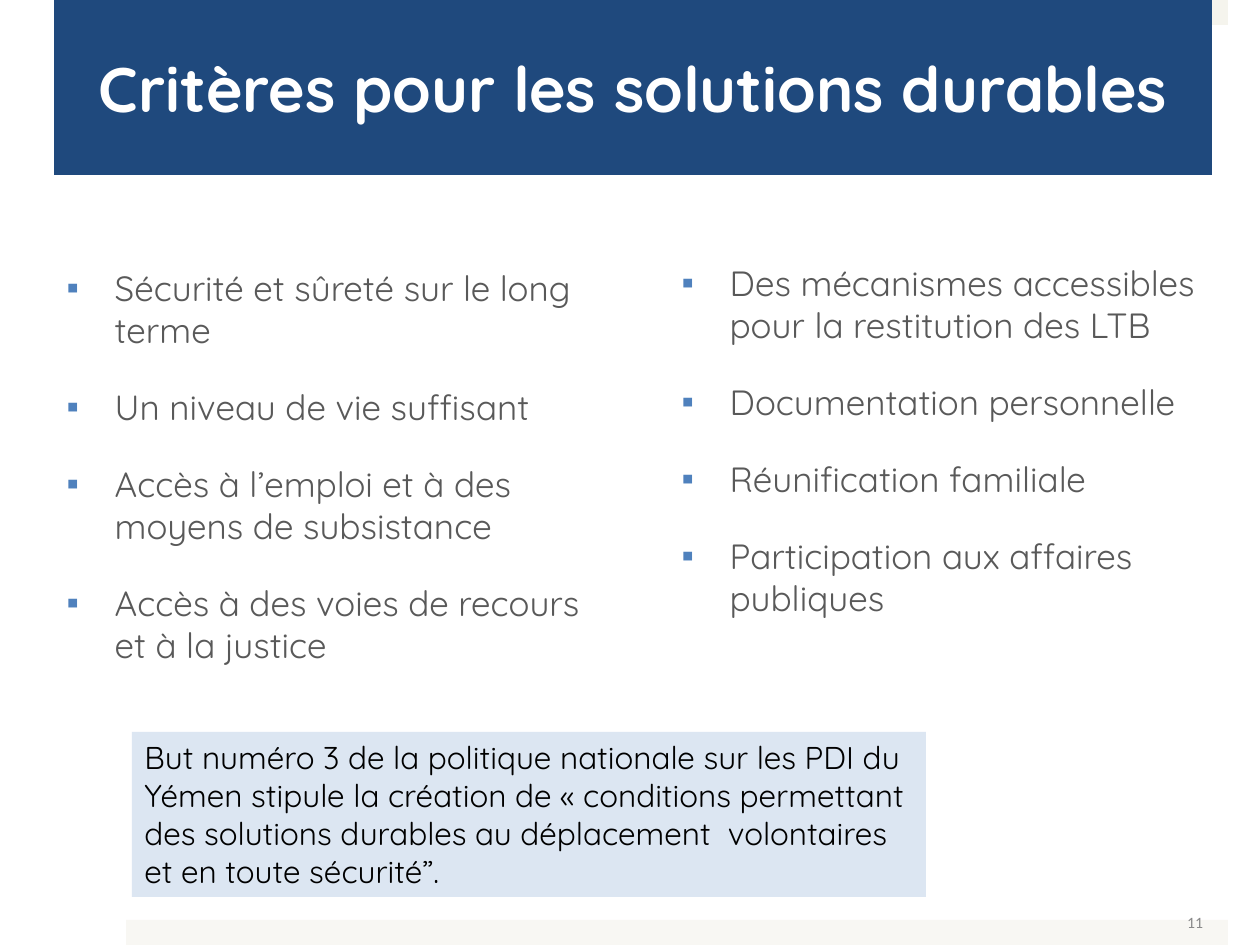
from dataclasses import dataclass

from lxml.etree import SubElement
from pptx import Presentation
from pptx.dml.color import RGBColor
from pptx.enum.shapes import MSO_SHAPE as Shape
from pptx.enum.text import MSO_ANCHOR as Anchor, MSO_AUTO_SIZE as AutoSize, PP_ALIGN as Align
from pptx.oxml.ns import qn
from pptx.util import Emu, Inches, Pt

PX_PER_INCH = 126
TWO_CONTENT_LAYOUT = 3


@dataclass(frozen=True)
class Theme:
    font: str = "Quicksand"
    number_font: str = "Calibri"
    navy: str = "1F497D"
    accent: str = "4F81BD"
    pale_blue: str = "DCE6F2"
    top_band: str = "F5F4ED"
    bottom_band: str = "F8F7F3"
    white: str = "FFFFFF"
    black: str = "000000"
    body_grey: str = "595959"
    number_grey: str = "898989"
    title_size: int = 36
    body_size: int = 20
    quote_size: int = 18
    number_size: int = 9
    bullet: str = "▪"


def px(length):
    return Emu(round(length * Inches(1) / PX_PER_INCH))


class SlideBuilder:
    """Holds the theme and the current slide, and adds each kind of element."""

    def __init__(self, slide, theme):
        self.slide = slide
        self.theme = theme

    def place(self, placeholder, box):
        self.slide.shapes._spTree.append(placeholder._element)
        placeholder.left, placeholder.top, placeholder.width, placeholder.height = map(px, box)
        placeholder.text_frame.auto_size = AutoSize.NONE
        placeholder.text_frame.word_wrap = True

    def format_runs(self, paragraph, size, color, bold=False, name=None):
        for run in paragraph.runs:
            run.font.name = name or self.theme.font
            run.font.size = Pt(size)
            run.font.bold = bold
            run.font.color.rgb = RGBColor.from_string(color)

    def fill(self, shape, color):
        shape.fill.solid()
        shape.fill.fore_color.rgb = RGBColor.from_string(color)

    def rectangle(self, box, color):
        shape = self.slide.shapes.add_shape(Shape.RECTANGLE, *map(px, box))
        shape.shadow.inherit = False
        self.fill(shape, color)
        shape.line.fill.background()
        return shape

    def title(self, text, box):
        title = self.slide.shapes.title
        self.place(title, box)
        self.fill(title, self.theme.navy)
        title.text_frame.text = text
        title.text_frame.vertical_anchor = Anchor.MIDDLE
        paragraph = title.text_frame.paragraphs[0]
        paragraph.alignment = Align.CENTER
        self.format_runs(paragraph, self.theme.title_size, self.theme.white, bold=True)

    def add_bullet(self, paragraph):
        properties = paragraph._p.get_or_add_pPr()
        properties.set("marL", str(px(48)))
        properties.set("indent", str(-px(48)))
        color = SubElement(properties, qn("a:buClr"))
        SubElement(color, qn("a:srgbClr"), val=self.theme.accent)
        SubElement(properties, qn("a:buFont"), typeface="Arial")
        SubElement(properties, qn("a:buChar"), char=self.theme.bullet)

    def bullet_list(self, index, items, box):
        body = self.slide.placeholders[index]
        self.place(body, box)
        body.text_frame.text = "\n".join(items)
        for position, paragraph in enumerate(body.text_frame.paragraphs):
            self.add_bullet(paragraph)
            paragraph.space_before = Pt(20 if position else 0)
            self.format_runs(paragraph, self.theme.body_size, self.theme.body_grey)

    def quote(self, text, box):
        text_frame = self.rectangle(box, self.theme.pale_blue).text_frame
        text_frame.word_wrap = True
        text_frame.vertical_anchor = Anchor.TOP
        text_frame.text = text
        paragraph = text_frame.paragraphs[0]
        paragraph.alignment = Align.LEFT
        self.format_runs(paragraph, self.theme.quote_size, self.theme.black)

    def page_number(self, text, box):
        text_frame = self.slide.shapes.add_textbox(*map(px, box)).text_frame
        text_frame.word_wrap = True
        text_frame.vertical_anchor = Anchor.MIDDLE
        text_frame.margin_left = text_frame.margin_right = px(9)
        text_frame.margin_top = text_frame.margin_bottom = px(5)
        text_frame.text = text
        paragraph = text_frame.paragraphs[0]
        paragraph.alignment = Align.RIGHT
        self.format_runs(paragraph, self.theme.number_size, self.theme.number_grey,
                         name=self.theme.number_font)


def main():
    presentation = Presentation()
    presentation.slide_width, presentation.slide_height = px(1260), px(945)
    layout = presentation.slide_layouts[TWO_CONTENT_LAYOUT]
    theme = Theme()
    builder = SlideBuilder(presentation.slides.add_slide(layout), theme)

    builder.rectangle((126, 0, 1102, 25), theme.top_band)
    builder.rectangle((126, 920, 1102, 25), theme.bottom_band)
    builder.page_number("11", (919, 897, 293, 50))
    builder.title("Critères pour les solutions durables", (54, 0, 1158, 175))
    builder.bullet_list(1, [
        "Sécurité et sûreté sur le long terme",
        "Un niveau de vie suffisant",
        "Accès à l’emploi et à des moyens de subsistance",
        "Accès à des voies de recours et à la justice",
    ], (54, 260, 576, 461))
    builder.bullet_list(2, [
        "Des mécanismes accessibles pour la restitution des LTB",
        "Documentation personnelle",
        "Réunification familiale",
        "Participation aux affaires publiques",
    ], (669, 255, 556, 446))
    builder.quote(
        "But numéro 3 de la politique nationale sur les PDI du Yémen stipule la création "
        "de « conditions permettant des solutions durables au déplacement  volontaires "
        "et en toute sécurité”.", (132, 732, 794, 165))

    presentation.save("out.pptx")


if __name__ == "__main__":
    main()
